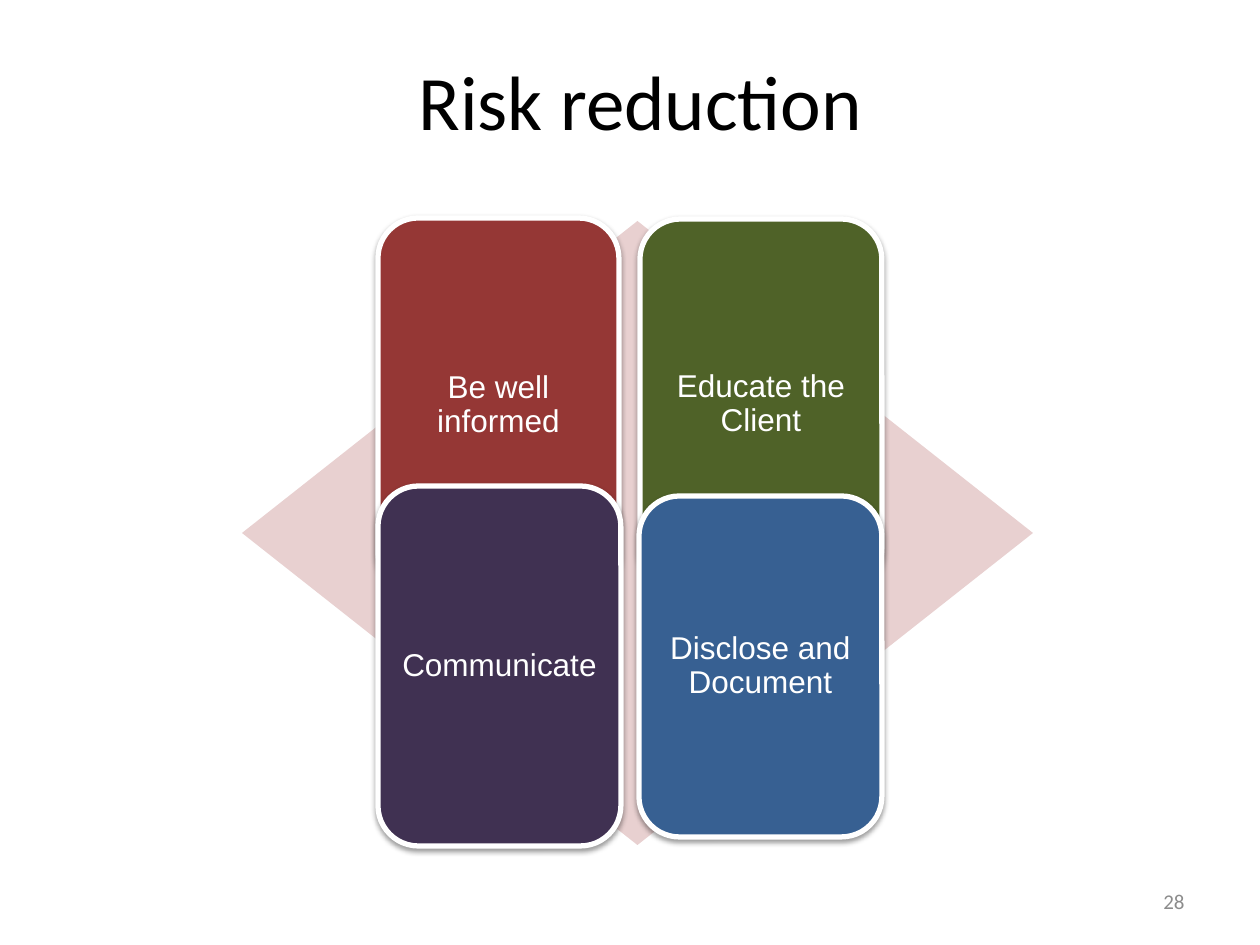
from dataclasses import dataclass

from lxml import etree
from pptx import Presentation
from pptx.dml.color import RGBColor
from pptx.enum.shapes import MSO_SHAPE
from pptx.enum.text import MSO_ANCHOR, PP_ALIGN
from pptx.oxml.ns import qn
from pptx.util import Emu, Pt

DIAMOND = MSO_SHAPE.DIAMOND
ROUNDED = MSO_SHAPE.ROUNDED_RECTANGLE
MIDDLE = MSO_ANCHOR.MIDDLE
CENTER, RIGHT = PP_ALIGN.CENTER, PP_ALIGN.RIGHT
EMU_PER_PX = 914400 // 126


@dataclass(frozen=True)
class Theme:
    heading_font: str = "Calibri"
    card_font: str = "Arial"
    title_size: int = 44
    card_size: int = 18
    number_size: int = 12
    black: str = "000000"
    white: str = "FFFFFF"
    grey: str = "8C8C8C"
    pink: str = "E8D0D0"
    red: str = "953735"
    green: str = "4F6228"
    purple: str = "403152"
    blue: str = "376092"


THEME = Theme()

CARDS = [
    ("Be well informed", THEME.red, (378, 218, 241, 374)),
    ("Educate the Client", THEME.green, (640, 219, 242, 370)),
    ("Communicate", THEME.purple, (378, 486, 243, 360)),
    ("Disclose and Document", THEME.blue, (639, 496, 243, 341)),
]


def px(n):
    return Emu(n * EMU_PER_PX)


def rgb(color):
    return RGBColor.from_string(color)


def write_text(tf, text, font, size, color, align):
    tf.word_wrap = True
    tf.vertical_anchor = MIDDLE
    p = tf.paragraphs[0]
    p.text = text
    p.alignment = align
    p.font.name = font
    p.font.size = Pt(size)
    p.font.color.rgb = rgb(color)
    return p


def add_text(slide, box, *style):
    tb = slide.shapes.add_textbox(*map(px, box))
    write_text(tb.text_frame, *style)


def add_filled_shape(slide, kind, box, color):
    s = slide.shapes.add_shape(kind, *map(px, box))
    s.shadow.inherit = False
    s.fill.solid()
    s.fill.fore_color.rgb = rgb(color)
    s.line.fill.background()
    return s


def add_drop_shadow(s):
    """Fill the shape's empty effect list with a soft shadow straight below."""
    effects = s._element.spPr.find(qn("a:effectLst"))
    shadow = etree.SubElement(
        effects, qn("a:outerShdw"), blurRad=str(Pt(3.1)), dist=str(Pt(1.6)),
        dir="5400000", rotWithShape="0")
    color = etree.SubElement(shadow, qn("a:srgbClr"), val=THEME.black)
    etree.SubElement(color, qn("a:alpha"), val="38000")


def add_card(slide, text, color, box):
    s = add_filled_shape(slide, ROUNDED, box, color)
    s.line.color.rgb = rgb(THEME.white)
    s.line.width = Pt(3)
    add_drop_shadow(s)
    tf = s.text_frame
    tf.margin_left = tf.margin_right = tf.margin_top = tf.margin_bottom = px(9)
    p = write_text(tf, text, THEME.card_font, THEME.card_size, THEME.white, CENTER)
    p.line_spacing = 0.9


def main():
    prs = Presentation()
    prs.slide_width, prs.slide_height = px(1260), px(945)
    slide = prs.slides.add_slide(prs.slide_layouts[6])

    add_text(slide, (42, 21, 1197, 158), "Risk reduction",
             THEME.heading_font, THEME.title_size, THEME.black, CENTER)
    add_filled_shape(slide, DIAMOND, (242, 221, 791, 624), THEME.pink)
    for card in CARDS:
        add_card(slide, *card)
    add_text(slide, (903, 876, 294, 50), "28",
             THEME.heading_font, THEME.number_size, THEME.grey, RIGHT)

    prs.save("out.pptx")


if __name__ == "__main__":
    main()
